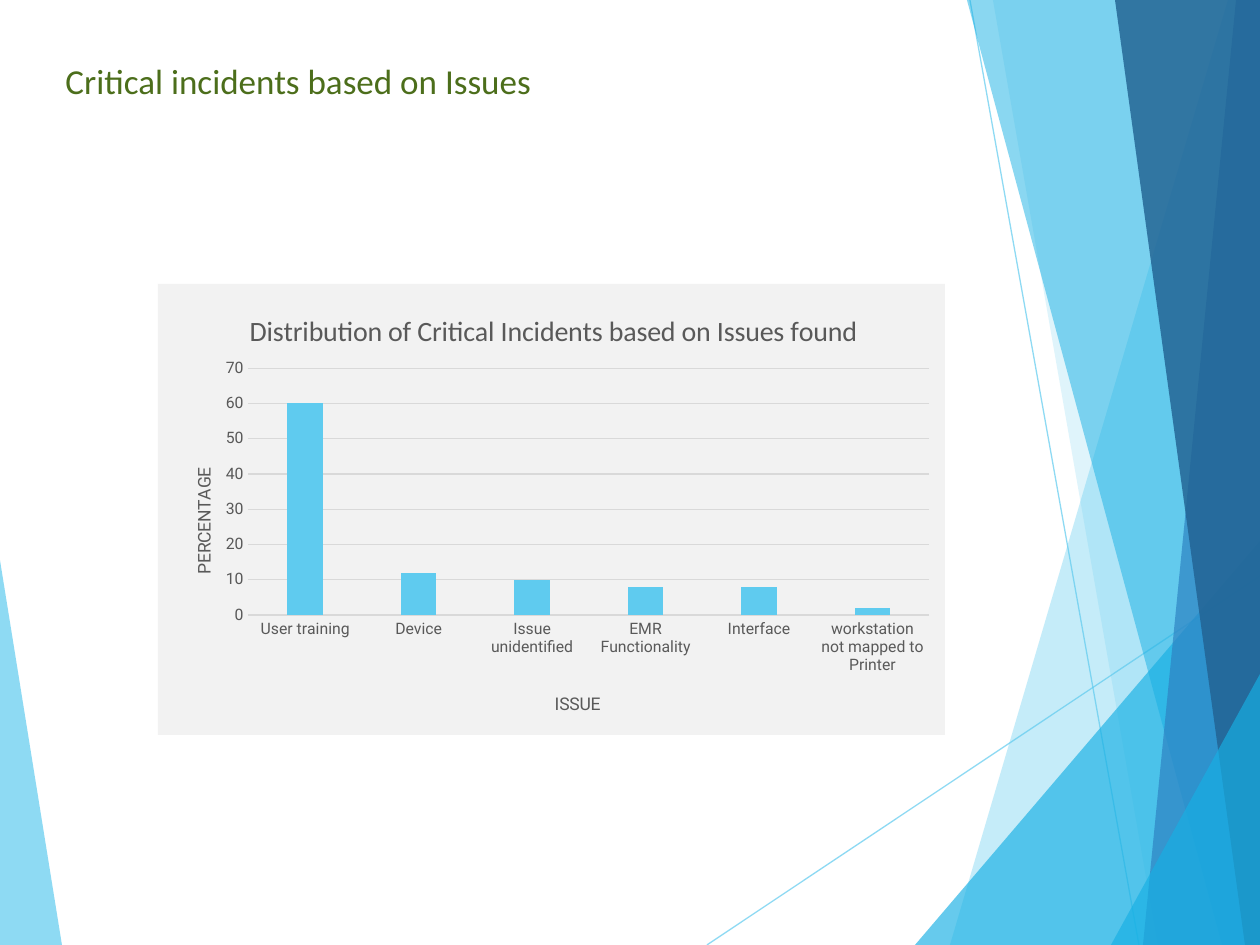
from lxml.etree import SubElement
from pptx import Presentation
from pptx.chart.data import CategoryChartData
from pptx.dml.color import RGBColor
from pptx.enum.chart import XL_CHART_TYPE, XL_TICK_MARK
from pptx.enum.shapes import MSO_CONNECTOR
from pptx.enum.text import MSO_AUTO_SIZE
from pptx.oxml.ns import qn
from pptx.util import Pt

SCALE = 914400 // 126
WIDTH, HEIGHT = 1260, 945
SKY, CYAN, BLUE, NAVY = "5FCBEF", "17B0E4", "2E83C3", "226292"
GREEN, GRAY, GRID, PANEL = "4C6E1B", "595959", "D9D9D9", "F2F2F2"

LEFT_WEDGE = ([(0, 560), (62, HEIGHT), (0, HEIGHT)], SKY, 70)
HAIRLINES = [((707, HEIGHT), (WIDTH, 576)), ((970, 0), (1139, HEIGHT))]


def band(top, bottom, color, opacity):
    """Full-height facet whose slanted left edge runs from top to bottom."""
    return [(top, 0), (bottom, HEIGHT), (WIDTH, HEIGHT), (WIDTH, 0)], color, opacity


def corner(left, top, color, opacity):
    """Triangle in the lower right corner."""
    return [(left, HEIGHT), (WIDTH, top), (WIDTH, HEIGHT)], color, opacity


FACETS = [
    band(1228, 950, SKY, 36),
    band(993, 1158, SKY, 20),
    corner(915, 541, CYAN, 66),
    band(967, 1222, CYAN, 50),
    band(1236, 1143, BLUE, 70),
    band(1115, 1245, NAVY, 82),
    corner(1111, 674, CYAN, 66),
]
ISSUES = {
    "User training": 60,
    "Device": 12,
    "Issue unidentified": 10,
    "EMR Functionality": 8,
    "Interface": 8,
    "workstation not mapped to Printer": 2,
}


def px(*lengths):
    return [length * SCALE for length in lengths]


def rgb(color):
    return RGBColor.from_string(color)


def set_values(target, values):
    for name, value in values.items():
        setattr(target, name, value)


def set_font(font, name, size, color):
    set_values(font, {"name": name, "size": Pt(size)})
    font.color.rgb = rgb(color)


def set_line(line, color):
    line.color.rgb = rgb(color)
    line.width = Pt(0.75)


def set_opacity(shape, percent):
    for color in shape._element.spPr.iter(qn("a:srgbClr")):
        SubElement(color, qn("a:alpha")).set("val", str(percent * 1000))


def set_layout(parent, index, **places):
    """Place a chart part by fractions of the chart area."""
    for old in parent.findall(qn("c:layout")):
        parent.remove(old)
    layout = SubElement(parent, qn("c:layout"))
    parent.insert(index, layout)
    manual = SubElement(layout, qn("c:manualLayout"))
    if "w" in places:
        SubElement(manual, qn("c:layoutTarget")).set("val", "inner")
    for mode in ("xMode", "yMode"):
        SubElement(manual, qn("c:" + mode)).set("val", "edge")
    for name, value in places.items():
        SubElement(manual, qn("c:" + name)).set("val", str(value))


def set_title(owner, title, text, name, size, x, y):
    owner.has_title = True
    title = getattr(owner, title)
    para = title.text_frame.paragraphs[0]
    span = para.add_run()
    span.text = text
    for font in (para.font, span.font):
        set_font(font, name, size, GRAY)
        font.bold = False
    set_layout(title._element, 1, x=x, y=y)
    return title


class Painter:
    def __init__(self, page):
        self.page = page

    def facet(self, points, color, opacity):
        points = [tuple(px(*point)) for point in points]
        builder = self.page.shapes.build_freeform(*points[0])
        builder.add_line_segments(points[1:], close=True)
        shape = builder.convert_to_shape()
        shape.shadow.inherit = False
        shape.fill.solid()
        shape.fill.fore_color.rgb = rgb(color)
        shape.line.fill.background()
        set_opacity(shape, opacity)

    def hairline(self, start, end):
        line = self.page.shapes.add_connector(
            MSO_CONNECTOR.STRAIGHT, *px(*start, *end))
        set_line(line.line, SKY)
        set_opacity(line, 70)
        SubElement(line._element.spPr, qn("a:effectLst"))

    def heading(self, text, *place):
        box = self.page.shapes.add_textbox(*px(*place))
        set_values(box.text_frame, {
            "word_wrap": False, "auto_size": MSO_AUTO_SIZE.SHAPE_TO_FIT_TEXT})
        span = box.text_frame.paragraphs[0].add_run()
        span.text = text
        set_font(span.font, "Calibri", 20, GREEN)

    def column_chart(self, values, *place):
        data = CategoryChartData()
        data.categories = list(values)
        data.add_series("Series 1", list(values.values()))
        chart = self.page.shapes.add_chart(
            XL_CHART_TYPE.COLUMN_CLUSTERED, *px(*place), data).chart
        chart.has_legend = False
        set_font(chart.font, "Roboto", 10, "000000")
        plot = chart.plots[0]
        set_values(plot, {"gap_width": 219, "overlap": -27, "vary_by_categories": False})
        fill = plot.series[0].format.fill
        fill.solid()
        fill.fore_color.rgb = rgb(SKY)
        self.panel(chart)
        self.axes(chart)
        set_title(chart, "chart_title",
                  "Distribution of Critical Incidents based on Issues found",
                  "Calibri", 16, 0.11, 0.05)
        plot_area = chart._chartSpace.chart.plotArea
        set_layout(plot_area, 0, x=0.115, y=0.187, w=0.865, h=0.547)

    def panel(self, chart):
        properties = chart._chartSpace.makeelement(qn("c:spPr"))
        chart._chartSpace.chart.addnext(properties)
        fill = SubElement(properties, qn("a:solidFill"))
        SubElement(fill, qn("a:srgbClr")).set("val", PANEL)
        line = SubElement(properties, qn("a:ln"))
        SubElement(line, qn("a:noFill"))

    def axes(self, chart):
        category, value = chart.category_axis, chart.value_axis
        for axis in (category, value):
            set_values(axis, {"major_tick_mark": XL_TICK_MARK.NONE,
                              "minor_tick_mark": XL_TICK_MARK.NONE})
            set_font(axis.tick_labels.font, "Roboto", 9, GRAY)
        set_line(category.format.line, GRID)
        set_values(value, {"minimum_scale": 0, "maximum_scale": 70, "major_unit": 10})
        value.format.line.fill.background()
        set_line(value.major_gridlines.format.line, GRID)
        set_title(category, "axis_title", "ISSUE", "Roboto", 10, 0.5, 0.9)
        title = set_title(value, "axis_title", "PERCENTAGE", "Roboto", 10, 0.04, 0.4)
        title.text_frame._txBody.bodyPr.set("rot", "-5400000")


def main():
    deck = Presentation()
    deck.slide_width, deck.slide_height = px(WIDTH, HEIGHT)
    painter = Painter(deck.slides.add_slide(deck.slide_layouts[6]))
    painter.facet(*LEFT_WEDGE)
    for ends in HAIRLINES:
        painter.hairline(*ends)
    for facet in FACETS:
        painter.facet(*facet)
    painter.heading("Critical incidents based on Issues", 53, 53, 496, 55)
    painter.column_chart(ISSUES, 158, 284, 787, 451)
    deck.save("out.pptx")


if __name__ == "__main__":
    main()
